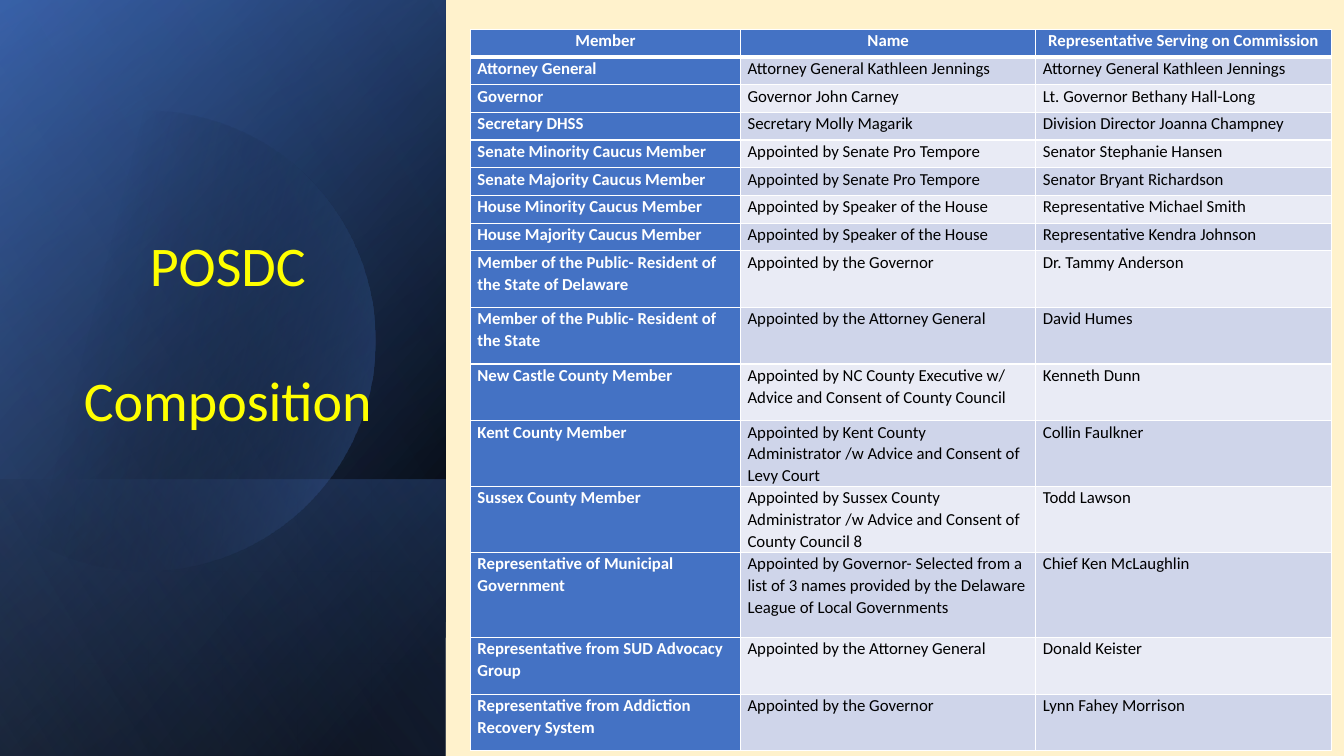
from dataclasses import dataclass
from math import acos, cos, pi, sin

from lxml.etree import SubElement as Sub
from pptx import Presentation as Deck
from pptx.dml.color import RGBColor as Color
from pptx.enum.shapes import MSO_SHAPE as Shape
from pptx.enum.text import MSO_ANCHOR as Anchor, PP_ALIGN as Align
from pptx.oxml.ns import qn
from pptx.util import Inches, Pt


@dataclass(frozen=True)
class Theme:
    font: str = "Calibri"
    cream: str = "FFF2CC"
    blue: str = "4472C4"
    navy: str = "2F5597"
    pale: str = "8FAADC"
    black: str = "000000"
    white: str = "FFFFFF"
    yellow: str = "FFFF00"
    bands: tuple = ("E9EBF5", "CFD5EA")
    head: int = 40
    body: int = 12


THEME = Theme()
WIDE, HIGH = Inches(13.333), Inches(7.5)
COLS, ROWS = 400, 300
SIDE = 132.6
SINGLE, DOUBLE, TRIPLE = 11, 22.46, 33.9
WIDTHS = (80.4, 87.9, 87.9)
HEIGHTS = [SINGLE] * 8 + [DOUBLE] * 5 + [TRIPLE] + [DOUBLE] * 2

MEMBERS = [
    ("Member", "Name", "Representative Serving on Commission"),
    ("Attorney General", "Attorney General Kathleen Jennings", "Attorney General Kathleen Jennings"),
    ("Governor", "Governor John Carney", "Lt. Governor Bethany Hall-Long"),
    ("Secretary DHSS", "Secretary Molly Magarik", "Division Director Joanna Champney"),
    ("Senate Minority Caucus Member", "Appointed by Senate Pro Tempore", "Senator Stephanie Hansen"),
    ("Senate Majority Caucus Member", "Appointed by Senate Pro Tempore", "Senator Bryant Richardson"),
    ("House Minority Caucus Member", "Appointed by Speaker of the House", "Representative Michael Smith"),
    ("House Majority Caucus Member", "Appointed by Speaker of the House", "Representative Kendra Johnson"),
    ("Member of the Public- Resident of the State of Delaware", "Appointed by the Governor",
     "Dr. Tammy Anderson"),
    ("Member of the Public- Resident of the State", "Appointed by the Attorney General", "David Humes"),
    ("New Castle County Member", "Appointed by NC County Executive w/ Advice and Consent of County Council",
     "Kenneth Dunn"),
    ("Kent County Member", "Appointed by Kent County Administrator /w Advice and Consent of Levy Court",
     "Collin Faulkner"),
    ("Sussex County Member",
     "Appointed by Sussex County Administrator /w Advice and Consent of County Council 8", "Todd Lawson"),
    ("Representative of Municipal Government",
     "Appointed by Governor- Selected from a list of 3 names provided by the Delaware League of Local Governments",
     "Chief Ken McLaughlin"),
    ("Representative from SUD Advocacy Group", "Appointed by the Attorney General", "Donald Keister"),
    ("Representative from Addiction Recovery System", "Appointed by the Governor", "Lynn Fahey Morrison"),
]


def col(n):
    return round(WIDE * n / COLS)


def row(n):
    return round(HIGH * n / ROWS)


def paint(item, tone):
    item.fill.solid()
    item.fill.fore_color.rgb = Color.from_string(tone)


def blend(shape, stops, angle):
    shape.shadow.inherit = False
    shape.line.fill.background()
    shape.fill.background()
    props = shape.element.spPr
    blank = props.find(qn("a:noFill"))
    grad = props.makeelement(qn("a:gradFill"), {"rotWithShape": "1"})
    props.replace(blank, grad)
    marks = Sub(grad, qn("a:gsLst"))
    for place, tone, alpha in stops:
        mark = Sub(marks, qn("a:gs"), pos=str(place * 1000))
        ink = Sub(mark, qn("a:srgbClr"), val=tone)
        if alpha < 100:
            Sub(ink, qn("a:alpha"), val=str(alpha * 1000))
    Sub(grad, qn("a:lin"), ang=str(angle * 60000), scaled="0")


def panel(slide, top, stops, angle):
    wide, tall = col(SIDE), HIGH - row(top)
    left, upper = (wide - tall) // 2, row(top) + (tall - wide) // 2
    shape = slide.shapes.add_shape(Shape.RECTANGLE, left, upper, tall, wide)
    shape.rotation = 90
    shape.element.spPr.find(qn("a:xfrm")).set("flipH", "1")
    blend(shape, stops, angle)


def disc(slide, stops, angle):
    x, y, size = col(43.2), row(135.2), row(91.2)
    reach = pi - acos(x / size)
    steps = 120
    turns = [reach * (2 * n / steps - 1) for n in range(steps + 1)]
    points = [(round(x + size * cos(t)), round(y + size * sin(t))) for t in turns]
    form = slide.shapes.build_freeform(*points[0])
    form.add_line_segments(points[1:], close=True)
    blend(form.convert_to_shape(), stops, angle)


def style(para, size, tone, bold=False):
    for run in para.runs:
        font = run.font
        font.name, font.size, font.bold = THEME.font, Pt(size), bold
        font.color.rgb = Color.from_string(tone)


def title(slide, text):
    head = slide.shapes.title
    head.left, head.top, head.width, head.height = col(15.3), row(25.6), col(105), row(148)
    frame = head.text_frame
    frame.text = text
    frame.word_wrap = True
    frame.vertical_anchor = Anchor.BOTTOM
    para = frame.paragraphs[0]
    para.alignment, para.line_spacing = Align.CENTER, 2.0
    style(para, THEME.head, THEME.yellow)
    head.element.getparent().append(head.element)


def border(cell, sides):
    props = cell._tc.get_or_add_tcPr()
    for n, (side, size) in enumerate(sides.items()):
        line = props.makeelement(qn("a:ln" + side), {"w": str(Pt(size))})
        props.insert(n, line)
        Sub(Sub(line, qn("a:solidFill")), qn("a:srgbClr"), val=THEME.white)


def fill_cell(cell, text, r, c):
    strong = r == 0 or c == 0
    paint(cell, THEME.blue if strong else THEME.bands[r % 2])
    border(cell, {"L": 1, "R": 1, "T": 3 if r == 1 else 1, "B": 3 if r == 0 else 1})
    cell.margin_left = cell.margin_right = Inches(0.07)
    cell.margin_top = cell.margin_bottom = 0
    cell.text_frame.text = text
    para = cell.text_frame.paragraphs[0]
    para.line_spacing = 1.07
    para.alignment = Align.CENTER if r == 0 else Align.LEFT
    style(para, THEME.body, THEME.white if strong else THEME.black, strong)


def roster(slide):
    table = slide.shapes.add_table(len(MEMBERS), len(WIDTHS), col(140), row(11.6),
                                   col(sum(WIDTHS)), row(sum(HEIGHTS))).table
    for part, width in zip(table.columns, WIDTHS):
        part.width = col(width)
    for r, (part, height, texts) in enumerate(zip(table.rows, HEIGHTS, MEMBERS)):
        part.height = row(height)
        for c, text in enumerate(texts):
            fill_cell(table.cell(r, c), text, r, c)


def main():
    deck = Deck()
    deck.slide_width, deck.slide_height = WIDE, HIGH
    slide = deck.slides.add_slide(deck.slide_layouts[5])
    paint(slide.background, THEME.cream)
    base = slide.shapes.add_shape(Shape.RECTANGLE, 0, 0, WIDE, HIGH)
    base.shadow.inherit = False
    base.line.fill.background()
    paint(base, THEME.cream)
    panel(slide, 0, [(8, THEME.black, 100), (100, THEME.navy, 100)], 50)
    panel(slide, 0, [(0, THEME.black, 0), (99, THEME.blue, 46)], 30)
    panel(slide, 190.4, [(2, THEME.blue, 29), (100, THEME.black, 30)], 130)
    disc(slide, [(29, THEME.black, 0), (100, THEME.blue, 43)], 14)
    panel(slide, 0, [(0, THEME.black, 0), (99, THEME.pale, 11)], 120)
    title(slide, "POSDC Composition")
    roster(slide)
    deck.save("out.pptx")


if __name__ == "__main__":
    main()
